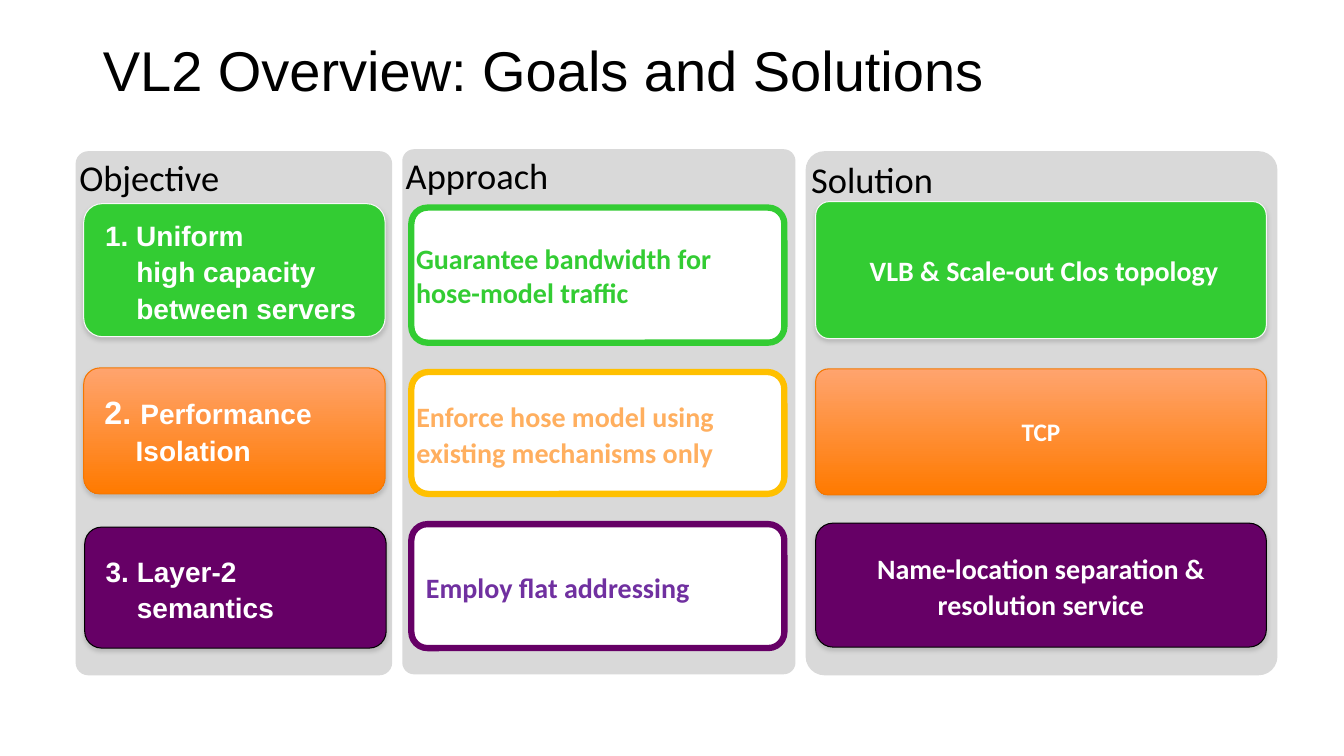
import dataclasses

import lxml.etree
import pptx
import pptx.dml.color
import pptx.enum.shapes
import pptx.enum.text
import pptx.oxml.ns
import pptx.util

Inches = pptx.util.Inches
Pt = pptx.util.Pt
ALIGN = pptx.enum.text.PP_ALIGN
ANCHOR = pptx.enum.text.MSO_ANCHOR
qn = pptx.oxml.ns.qn


def rgb(value):
    return pptx.dml.color.RGBColor.from_string(value)


@dataclasses.dataclass(frozen=True)
class Theme:
    heading_font: str = "Arial"
    body_font: str = "Calibri"
    title_size: int = 40
    panel_size: int = 26
    number_size: int = 23
    card_size: int = 20
    small_size: int = 18
    line_pitch: int = 26
    thin: float = 0.75
    thick: float = 4.5
    black: str = "000000"
    white: str = "FFFFFF"
    panel: str = "D9D9D9"
    shadow: str = "808080"
    green: str = "33CC33"
    green_edge: str = "F9F9F9"
    orange: tuple = ("FFA46E", "FF7A00")
    orange_edge: str = "F57700"
    amber: str = "FFC000"
    amber_text: str = "FFAF5F"
    purple: str = "660066"
    purple_text: str = "7030A0"


class SlideBuilder:
    def __init__(self, page, theme):
        self.page = page
        self.theme = theme

    def format_span(self, span, size, font, color, bold=False):
        span.font.size = Pt(size)
        span.font.name = font
        span.font.color.rgb = rgb(color)
        span.font.bold = bold

    def title(self, text):
        box = self.page.shapes.title
        box.left, box.top = Inches(0.92), Inches(0)
        box.width, box.height = Inches(11.5), Inches(1.45)
        box.text_frame.text = text
        box.text_frame.vertical_anchor = ANCHOR.MIDDLE
        para = box.text_frame.paragraphs[0]
        para.alignment = ALIGN.LEFT
        para.line_spacing = 0.9
        self.format_span(para.runs[0], self.theme.title_size,
                         self.theme.heading_font, self.theme.black)

    def rounded(self, place, radius, fill, edge=None, weight=0):
        box = self.page.shapes.add_shape(
            pptx.enum.shapes.MSO_SHAPE.ROUNDED_RECTANGLE,
            *(Inches(length) for length in place))
        box.adjustments[0] = radius
        box.shadow.inherit = False
        if isinstance(fill, tuple):
            box.fill.gradient()
            box.fill.gradient_angle = 270
            for stop, color in zip(box.fill.gradient_stops, fill):
                stop.color.rgb = rgb(color)
        else:
            box.fill.solid()
            box.fill.fore_color.rgb = rgb(fill)
        if edge:
            box.line.color.rgb = rgb(edge)
            box.line.width = Pt(weight)
        else:
            box.line.fill.background()
        return box

    def drop_shadow(self, box):
        effects = box._element.spPr.find(qn("a:effectLst"))
        shadow = lxml.etree.SubElement(
            effects, qn("a:outerShdw"), blurRad=str(Pt(3.1)), dist=str(Pt(1.8)),
            dir="5400000", rotWithShape="0")
        color = lxml.etree.SubElement(shadow, qn("a:srgbClr"), val=self.theme.shadow)
        lxml.etree.SubElement(color, qn("a:alpha"), val="35000")

    def set_text(self, box, parts, font, color, bold=True, align=ALIGN.LEFT,
                 anchor=ANCHOR.MIDDLE, margins=(0, 0), pitch=None, indent=None):
        frame = box.text_frame
        frame.word_wrap = True
        frame.vertical_anchor = anchor
        frame.margin_left = frame.margin_right = Inches(margins[0])
        frame.margin_top = frame.margin_bottom = Inches(margins[1])
        para = frame.paragraphs[0]
        para.alignment = align
        if pitch:
            para.line_spacing = Pt(pitch)
        if indent:
            properties = para._p.get_or_add_pPr()
            properties.set("marL", str(Inches(indent[0])))
            properties.set("indent", str(Inches(indent[1])))
        for text, size in parts:
            for index, line in enumerate(text.split("\n")):
                if index:
                    para.add_line_break()
                span = para.add_run()
                span.text = line
                self.format_span(span, size, font, color, bold)

    def panel(self, place, radius, heading):
        box = self.rounded(place, radius, self.theme.panel)
        self.set_text(box, [(heading, self.theme.panel_size)], self.theme.body_font,
                      self.theme.black, bold=False, anchor=ANCHOR.TOP)

    def objective(self, place, radius, fill, edge, parts):
        box = self.rounded(place, radius, fill, edge, self.theme.thin)
        self.drop_shadow(box)
        self.set_text(box, parts, self.theme.heading_font, self.theme.white,
                      margins=(0.1, 0.05), pitch=self.theme.line_pitch,
                      indent=(0.37, -0.31))

    def approach(self, top, height, radius, edge, color, text, margin=0, pitch=None):
        box = self.rounded((4.08, top, 3.7, height), radius, self.theme.white,
                           edge, self.theme.thick)
        self.set_text(box, [(text, self.theme.card_size)], self.theme.body_font,
                      color, margins=(margin, 0), pitch=pitch)

    def solution(self, top, height, radius, fill, edge, text, size, pitch=None):
        box = self.rounded((8.09, top, 4.47, height), radius, fill, edge,
                           self.theme.thin)
        self.drop_shadow(box)
        self.set_text(box, [(text, size)], self.theme.body_font, self.theme.white,
                      align=ALIGN.CENTER, pitch=pitch)


def main():
    deck = pptx.Presentation()
    deck.slide_width, deck.slide_height = Inches(13.33), Inches(7.5)
    theme = Theme()
    builder = SlideBuilder(deck.slides.add_slide(deck.slide_layouts[5]), theme)
    size, pitch = theme.card_size, theme.line_pitch
    green = (theme.green, theme.green_edge)
    orange = (theme.orange, theme.orange_edge)
    purple = (theme.purple, theme.black)

    builder.title("VL2 Overview: Goals and Solutions")

    builder.panel((7.99, 1.5, 4.68, 5.2), 0.04, "Solution")
    builder.panel((3.99, 1.48, 3.9, 5.21), 0.03, "Approach")
    builder.panel((0.75, 1.5, 3.14, 5.2), 0.04, "Objective")

    builder.objective((0.83, 2.02, 2.99, 1.32), 0.14, *green,
                      [("1. Uniform\nhigh capacity between servers", size)])
    builder.objective((0.83, 3.65, 2.99, 1.25), 0.13, *orange,
                      [("2. ", theme.number_size), ("Performance Isolation", size)])
    builder.objective((0.84, 5.23, 2.99, 1.2), 0.14, *purple,
                      [("3. Layer-2 semantics", size)])

    builder.approach(2.06, 1.34, 0.12, theme.green, theme.green,
                     "Guarantee bandwidth for\nhose-model traffic")
    builder.approach(3.69, 1.21, 0.14, theme.amber, theme.amber_text,
                     "Enforce hose model using existing mechanisms only", pitch=pitch)
    builder.approach(5.2, 1.23, 0.13, theme.purple, theme.purple_text,
                     "Employ flat addressing", margin=0.1, pitch=pitch)

    builder.solution(2, 1.36, 0.1, *green, " VLB & Scale-out Clos topology", size)
    builder.solution(3.66, 1.25, 0.1, *orange, "TCP", theme.small_size)
    builder.solution(5.19, 1.23, 0.14, *purple,
                     "Name-location separation & resolution service", size, pitch)

    deck.save("out.pptx")


if __name__ == "__main__":
    main()
